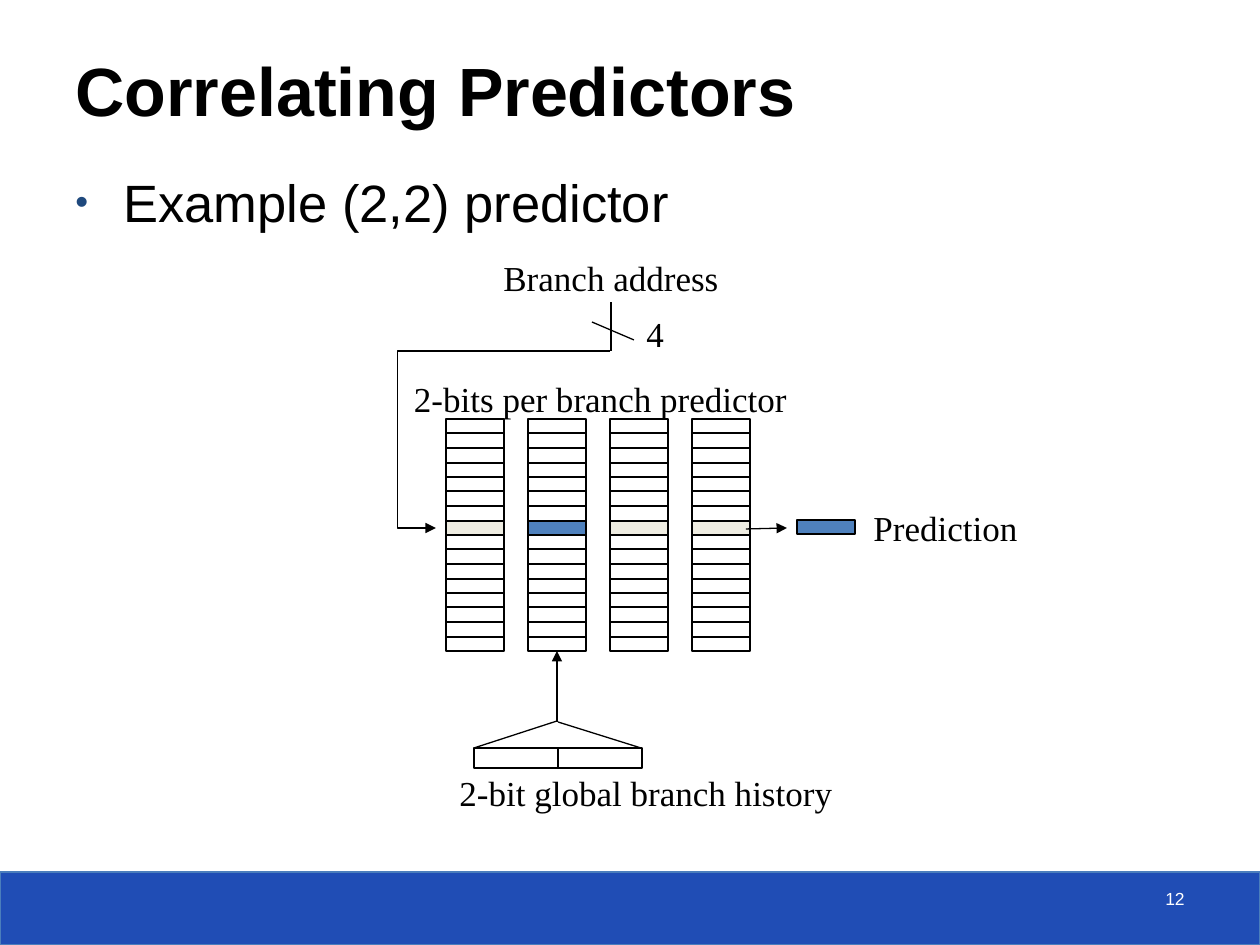
from dataclasses import dataclass

from lxml import etree
from pptx import Presentation
from pptx import util as u
from pptx.dml import color
from pptx.enum import shapes, text
from pptx.oxml import ns

EMU_PER_PX = 914400 / 126
COLORS = {
    "black": "000000",
    "white": "FFFFFF",
    "banner": "204DB5",
    "banner edge": "4B7EBC",
    "bullet": "1F497D",
    "selected row": "EEECE1",
    "prediction": "4F81BD",
}
TOP, BOTTOM = 0, 2  # connection sites of a rectangle

# Predictor tables
TABLE_LEFT, TABLE_TOP = 446, 419
TABLE_PITCH, TABLE_HEIGHT = 82, 232
TABLES, ROWS = 4, 16
CELL_WIDTH = 58
SELECTED_TABLE, SELECTED_ROW = 1, 7


@dataclass(frozen=True)
class Box:
    left: int
    top: int
    width: int
    height: int


@dataclass(frozen=True)
class Label:
    words: str
    box: Box
    size: int = 20
    font: str = "Times New Roman"
    color: str = "black"
    bold: bool = False
    align: text.PP_ALIGN = text.PP_ALIGN.LEFT
    anchor: text.MSO_ANCHOR = text.MSO_ANCHOR.TOP
    wrap: bool = True
    inset_top: int = 6
    fill: str | None = None
    bullet: bool = False


@dataclass(frozen=True)
class Line:
    start: tuple[int, int]
    end: tuple[int, int]
    arrow: bool = False
    bend: float | None = None


def px(length: float) -> u.Emu:
    return u.Emu(round(length * EMU_PER_PX))


def rgb(name: str) -> color.RGBColor:
    return color.RGBColor.from_string(COLORS[name])


def place(box: Box) -> tuple[u.Emu, ...]:
    return px(box.left), px(box.top), px(box.width), px(box.height)


def add_element(parent, tag: str, **attributes: str):
    return etree.SubElement(parent, ns.qn(tag), attributes)


def draw_box(slide, box: Box, fill: str | None = None, edge: str = "black"):
    rect = slide.shapes.add_shape(shapes.MSO_SHAPE.RECTANGLE, *place(box))
    rect.shadow.inherit = False
    if fill:
        rect.fill.solid()
        rect.fill.fore_color.rgb = rgb(fill)
    else:
        rect.fill.background()
    rect.line.color.rgb = rgb(edge)
    rect.line.width = u.Pt(0.75)
    return rect


def draw_line(slide, line: Line):
    kind = shapes.MSO_CONNECTOR.STRAIGHT if line.bend is None else shapes.MSO_CONNECTOR.ELBOW
    connector = slide.shapes.add_connector(kind, *map(px, line.start + line.end))
    connector.line.color.rgb = rgb("black")
    connector.line.width = u.Pt(0.75)
    properties = connector._element.spPr
    if line.arrow:
        add_element(properties.find(ns.qn("a:ln")), "a:tailEnd", type="triangle")
    if line.bend is not None:
        guides = properties.find(ns.qn("a:prstGeom")).find(ns.qn("a:avLst"))
        add_element(guides, "a:gd", name="adj1", fmla=f"val {round(line.bend * 100000)}")
    add_element(properties, "a:effectLst")
    return connector


def add_bullet(paragraph) -> None:
    properties = paragraph._p.get_or_add_pPr()
    properties.set("marL", str(px(48)))
    properties.set("indent", str(px(-48)))
    bullet_color = add_element(properties, "a:buClr")
    add_element(bullet_color, "a:srgbClr", val=COLORS["bullet"])
    add_element(properties, "a:buSzPct", val="70000")
    add_element(properties, "a:buFont", typeface="Arial")
    add_element(properties, "a:buChar", char="•")


def draw_label(slide, label: Label) -> None:
    holder = slide.shapes.add_textbox(*place(label.box))
    if label.fill:
        holder.fill.solid()
        holder.fill.fore_color.rgb = rgb(label.fill)
    frame = holder.text_frame
    frame.word_wrap = label.wrap
    frame.vertical_anchor = label.anchor
    frame.margin_top = px(label.inset_top)
    paragraph = frame.paragraphs[0]
    paragraph.alignment = label.align
    if label.bullet:
        add_bullet(paragraph)
    run = paragraph.add_run()
    run.text = label.words
    run.font.name = label.font
    run.font.size = u.Pt(label.size)
    run.font.bold = label.bold
    run.font.color.rgb = rgb(label.color)


def centered(words: str, box: Box) -> Label:
    return Label(words, box, align=text.PP_ALIGN.CENTER,
                 anchor=text.MSO_ANCHOR.MIDDLE, wrap=False)


def draw_table(slide, index: int):
    """Draw one column of predictor entries and return its last cell."""
    left = TABLE_LEFT + index * TABLE_PITCH
    edges = [TABLE_TOP + round(TABLE_HEIGHT * row / ROWS) for row in range(ROWS + 1)]
    for row, (top, bottom) in enumerate(zip(edges, edges[1:])):
        fill = None
        if row == SELECTED_ROW:
            fill = "prediction" if index == SELECTED_TABLE else "selected row"
        cell = draw_box(slide, Box(left, top, CELL_WIDTH, bottom - top), fill)
    return cell


LABELS = [
    Label("Correlating Predictors", Box(63, 32, 1162, 104), 39, "Arial", bold=True,
          anchor=text.MSO_ANCHOR.BOTTOM, fill="white"),
    Label("Example (2,2) predictor", Box(63, 158, 1134, 702), 30, "Arial",
          inset_top=12, bullet=True),
    Label("12", Box(903, 882, 294, 42), 10, "Arial", "white", align=text.PP_ALIGN.RIGHT),
    centered("Branch address", Box(466, 258, 290, 39)),
    centered("2-bits per branch predictor", Box(380, 378, 441, 42)),
    centered("2-bit global branch history", Box(438, 771, 416, 44)),
    Label("Prediction", Box(861, 500, 186, 54)),
    Label("4", Box(634, 306, 47, 54)),
]

LINES = [
    # Branch address selects a row
    Line((610, 351), (436, 528), arrow=True, bend=1.22),
    Line((611, 351), (611, 302)),
    Line((592, 322), (634, 340)),
    # Selected row gives the prediction
    Line((746, 529), (787, 528), arrow=True),
    # Funnel above the history register
    Line((558, 722), (641, 748)),
    Line((474, 748), (557, 721)),
]


def main() -> None:
    deck = Presentation()
    deck.slide_width, deck.slide_height = px(1260), px(945)
    slide = deck.slides.add_slide(deck.slide_layouts[6])

    # Footer band and all wording
    draw_box(slide, Box(0, 872, 1260, 73), "banner", "banner edge")
    for label in LABELS:
        draw_label(slide, label)

    # Predictor tables and the chosen prediction
    last_cells = [draw_table(slide, index) for index in range(TABLES)]
    draw_box(slide, Box(797, 520, CELL_WIDTH, 14), "prediction")
    for line in LINES:
        draw_line(slide, line)

    # History register, its divider and the arrow to the selected table
    register = draw_box(slide, Box(474, 748, 168, 20))
    divider = draw_line(slide, Line((558, 748), (558, 768)))
    divider.begin_connect(register, TOP)
    divider.end_connect(register, BOTTOM)
    selector = draw_line(slide, Line((557, 722), (557, 651), arrow=True))
    selector.end_connect(last_cells[SELECTED_TABLE], BOTTOM)

    deck.save("out.pptx")


if __name__ == "__main__":
    main()
